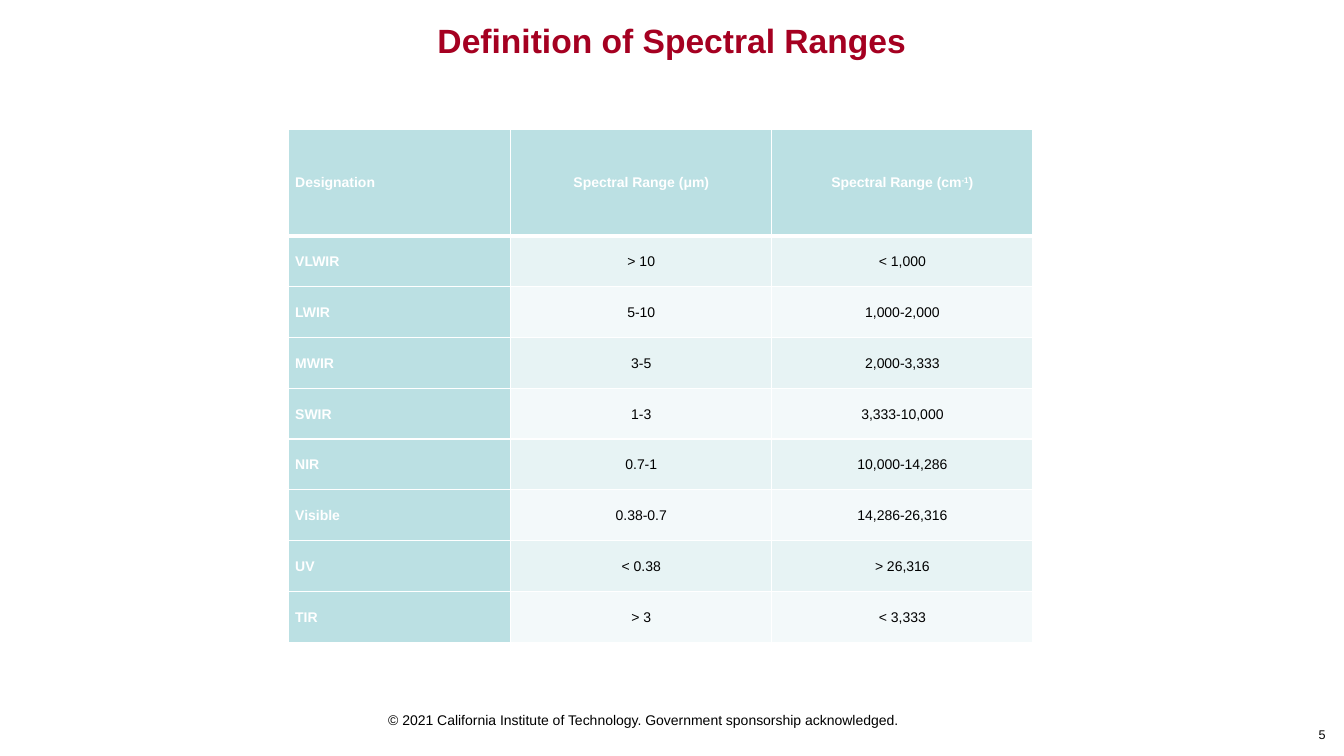
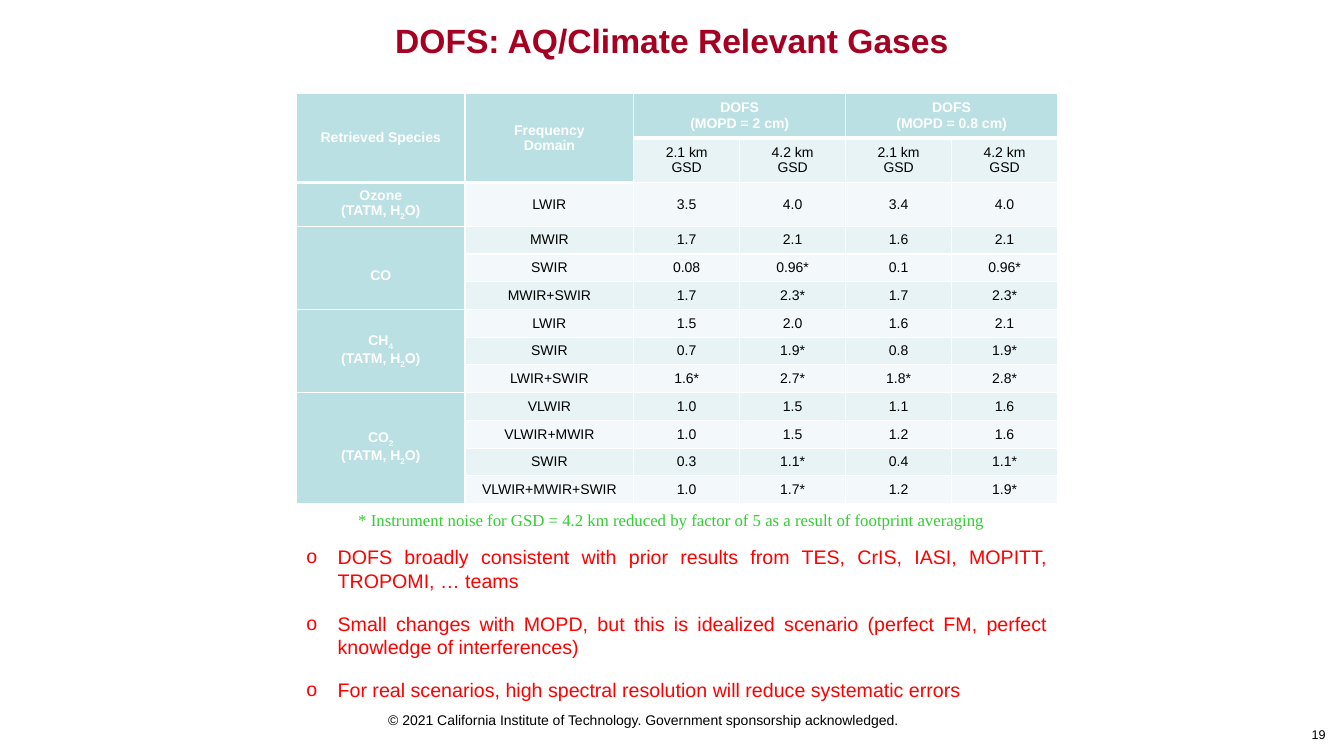
from lxml import etree
from pptx import Presentation
from pptx.dml.color import RGBColor
from pptx.enum.text import MSO_ANCHOR, PP_ALIGN
from pptx.oxml.ns import qn
from pptx.util import Cm, Pt

LEFT, CENTER, RIGHT, JUSTIFY = (PP_ALIGN.LEFT, PP_ALIGN.CENTER,
                                PP_ALIGN.RIGHT, PP_ALIGN.JUSTIFY)
TOP, MIDDLE = MSO_ANCHOR.TOP, MSO_ANCHOR.MIDDLE

BLACK, WHITE = "000000", "FFFFFF"
TITLE_RED, BULLET_RED, NOTE_GREEN = "A50021", "FF0000", "33CC33"
HEADER_TEAL = "BBE0E3"
BANDS = ("F3F9FA", "E7F3F4")  # even rows, odd rows
BASELINES = {"_": "-25000", "^": "30000"}

COPYRIGHT = ("© 2021 California Institute of Technology. "
             "Government sponsorship acknowledged.")

RANGES = [
    ("Designation", "Spectral Range (μm)", "Spectral Range (cm|^-1|)"),
    ("VLWIR", "> 10", "< 1,000"),
    ("LWIR", "5-10", "1,000-2,000"),
    ("MWIR", "3-5", "2,000-3,333"),
    ("SWIR", "1-3", "3,333-10,000"),
    ("NIR", "0.7-1", "10,000-14,286"),
    ("Visible", "0.38-0.7", "14,286-26,316"),
    ("UV", "< 0.38", "> 26,316"),
    ("TIR", "> 3", "< 3,333"),
]

INTERFERENCES = "\n(TATM, H|_2|O)"
GSD_PAIR = ("2.1 km\nGSD", "4.2 km\nGSD")
DOFS = [
    ("Retrieved Species", "Frequency\nDomain",
     "DOFS\n(MOPD = 2 cm)", "", "DOFS\n(MOPD = 0.8 cm)", ""),
    ("", "", *GSD_PAIR, *GSD_PAIR),
    ("Ozone" + INTERFERENCES, "LWIR", "3.5", "4.0", "3.4", "4.0"),
    ("CO", "MWIR", "1.7", "2.1", "1.6", "2.1"),
    ("", "SWIR", "0.08", "0.96*", "0.1", "0.96*"),
    ("", "MWIR+SWIR", "1.7", "2.3*", "1.7", "2.3*"),
    ("CH|_4|" + INTERFERENCES, "LWIR", "1.5", "2.0", "1.6", "2.1"),
    ("", "SWIR", "0.7", "1.9*", "0.8", "1.9*"),
    ("", "LWIR+SWIR", "1.6*", "2.7*", "1.8*", "2.8*"),
    ("CO|_2|" + INTERFERENCES, "VLWIR", "1.0", "1.5", "1.1", "1.6"),
    ("", "VLWIR+MWIR", "1.0", "1.5", "1.2", "1.6"),
    ("", "SWIR", "0.3", "1.1*", "0.4", "1.1*"),
    ("", "VLWIR+MWIR+SWIR", "1.0", "1.7*", "1.2", "1.9*"),
]
# First and last cell of each merged block, as (row, column)
DOFS_MERGES = [
    ((0, 0), (1, 0)), ((0, 1), (1, 1)), ((0, 2), (0, 3)), ((0, 4), (0, 5)),
    ((3, 0), (5, 0)), ((6, 0), (8, 0)), ((9, 0), (12, 0)),
]

NOTE = ("* Instrument noise for GSD = 4.2 km reduced by factor of 5 "
        "as a result of footprint averaging")
FINDINGS = "\n".join([
    "DOFS broadly consistent with prior results from TES, CrIS, IASI, "
    "MOPITT, TROPOMI, … teams",
    "Small changes with MOPD, but this is idealized scenario (perfect FM, "
    "perfect knowledge of interferences)",
    "For real scenarios, high spectral resolution will reduce systematic "
    "errors",
])


def rgb(hex_color):
    return RGBColor.from_string(hex_color)


def add_bullet(paragraph, char, indent):
    properties = paragraph._p.get_or_add_pPr()
    properties.set("marL", str(indent))
    properties.set("indent", str(-indent))
    etree.SubElement(properties, qn("a:buFont")).set("typeface", "Arial")
    etree.SubElement(properties, qn("a:buChar")).set("char", char)


def write_text(frame, text, size=10, color=BLACK, bold=False, font="Arial",
               align=CENTER, spacing=None, gap=0, bullet=None):
    """Write one paragraph per line; |_x| is a subscript, |^x| a superscript."""
    for index, line in enumerate(text.split("\n")):
        paragraph = frame.add_paragraph() if index else frame.paragraphs[0]
        if bullet:
            add_bullet(paragraph, bullet, Cm(0.79))
        paragraph.alignment = align
        if spacing:
            paragraph.line_spacing = spacing
        if index and gap:
            paragraph.space_before = Pt(gap)
        for piece in line.split("|"):
            baseline = BASELINES.get(piece[:1])
            run = paragraph.add_run()
            run.text = piece[1:] if baseline else piece
            run.font.name = font
            run.font.size = Pt(size)
            run.font.bold = bold
            run.font.color.rgb = rgb(color)
            if baseline:
                run.font._element.set("baseline", baseline)


def add_text(slide, box, text, wrap=True, anchor=TOP, inset=None, **style):
    frame = slide.shapes.add_textbox(*map(Cm, box)).text_frame
    frame.word_wrap = wrap
    frame.vertical_anchor = anchor
    if inset is not None:
        frame.margin_left = frame.margin_right = Cm(inset)
        frame.margin_top = frame.margin_bottom = Cm(inset)
    write_text(frame, text, **style)


def set_borders(cell, widths):
    """Draw white cell borders; widths maps a side (L, R, T, B) to points."""
    properties = cell._tc.get_or_add_tcPr()
    for side, width in widths.items():
        line = etree.SubElement(properties, qn(f"a:ln{side}"), w=str(Pt(width)))
        fill = etree.SubElement(line, qn("a:solidFill"))
        etree.SubElement(fill, qn("a:srgbClr")).set("val", WHITE)


def add_grid(slide, left, top, widths, heights, rows, merges=(),
             label_align=CENTER, spacing=None):
    """Add a table with teal header cells and two alternating row tints."""
    table = slide.shapes.add_table(
        len(rows), len(widths), Cm(left), Cm(top),
        Cm(sum(widths)), Cm(sum(heights))).table
    table.horz_banding = False
    for column, width in zip(table.columns, widths):
        column.width = Cm(width)
    for row, height in zip(table.rows, heights):
        row.height = Cm(height)

    header = {(0, c) for c in range(len(widths))}
    header |= {last for first, last in merges if first[0] == 0}
    for r, row in enumerate(rows):
        for c, text in enumerate(row):
            cell = table.cell(r, c)
            in_header = (r, c) in header
            is_label = in_header or c == 0
            sides = {"L": 1, "R": 1}
            if r == 0:
                sides["T"] = 1
            sides["B"] = 3 if in_header else 1
            set_borders(cell, sides)
            cell.fill.solid()
            cell.fill.fore_color.rgb = rgb(HEADER_TEAL if is_label
                                           else BANDS[r % 2])
            cell.vertical_anchor = MIDDLE
            cell.margin_left = cell.margin_right = Cm(0.18)
            cell.margin_top = cell.margin_bottom = 0
            write_text(cell.text_frame, text, bold=is_label,
                       color=WHITE if is_label else BLACK,
                       align=label_align if c == 0 else CENTER,
                       spacing=spacing)
    for first, last in merges:
        table.cell(*first).merge(table.cell(*last))
    return table


def add_page(deck, title, number):
    """Add a slide with the shared title, copyright line and page number."""
    slide = deck.slides.add_slide(deck.slide_layouts[6])
    add_text(slide, (9.4, 17.81, 13.61, 0.69), COPYRIGHT, wrap=False)
    add_text(slide, (6.93, 0.61, 20, 0.91), title, anchor=MIDDLE, inset=0,
             size=24, color=TITLE_RED, bold=True, spacing=0.9)
    add_text(slide, (30.76, 18.2, 2.9, 0.66), str(number), size=9, align=RIGHT)
    return slide


def add_ranges_slide(deck):
    slide = add_page(deck, "Definition of Spectral Ranges", 5)
    add_grid(slide, 7.26, 3.25, [5.61, 6.58, 6.58], [2.69] + [1.28] * 8,
             RANGES, label_align=LEFT, spacing=1.1)


def add_dofs_slide(deck):
    slide = add_page(deck, "DOFS: AQ/Climate Relevant Gases", 19)
    table = add_grid(slide, 7.47, 2.36, [4.25] * 2 + [2.67] * 4,
                     [1.12, 1.12, 1.1] + [0.7] * 10, DOFS, DOFS_MERGES)
    table.cell(3, 0).margin_top = Cm(0.4)  # CO sits below the middle
    add_text(slide, (5.33, 12.73, 23.19, 0.76), NOTE, size=12,
             color=NOTE_GREEN, font="Times New Roman")
    add_text(slide, (7.47, 13.61, 19.18, 4.2), FINDINGS, size=14,
             color=BULLET_RED, align=JUSTIFY, gap=14, bullet="o")


def main():
    deck = Presentation()
    deck.slide_width, deck.slide_height = Cm(33.87), Cm(19.05)
    add_ranges_slide(deck)
    add_dofs_slide(deck)
    deck.save("out.pptx")


if __name__ == "__main__":
    main()
